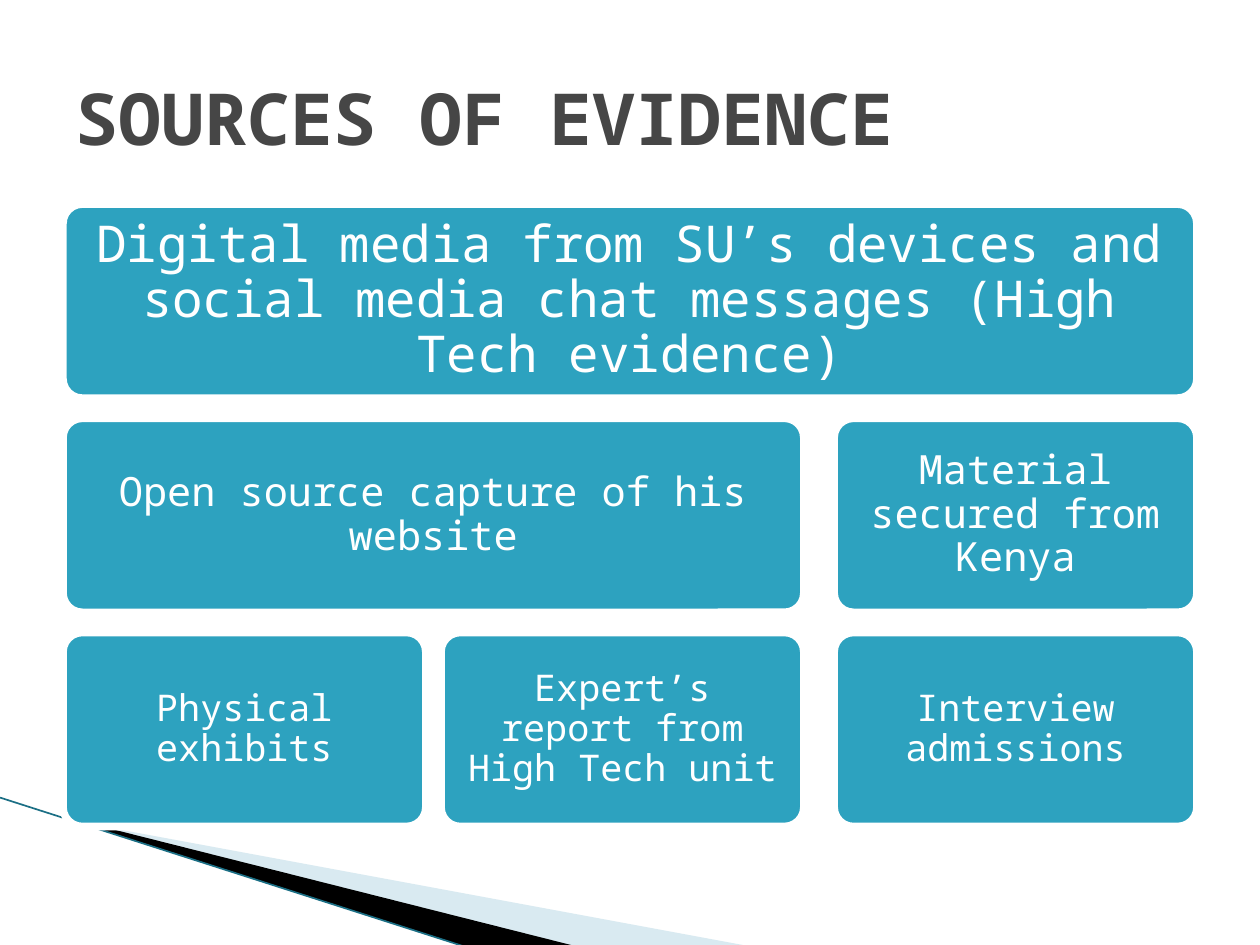
from lxml.etree import SubElement
from pptx import Presentation
from pptx.dml.color import RGBColor
from pptx.enum.shapes import MSO_CONNECTOR, MSO_SHAPE
from pptx.enum.text import MSO_ANCHOR, MSO_AUTO_SIZE, PP_ALIGN
from pptx.oxml.ns import qn
from pptx.util import Inches, Pt

FONT = "Noto Sans Mono"
COLORS = {"tile": "2DA2BF", "white": "FFFFFF", "title": "464646",
          "pale": "A0CBDC", "black": "000000", "edge": "1B6F85"}

# Each row: text size, inset, then (text, first column, columns spanned)
ROWS = [
    (29, 0.12, [("Digital media from SU’s devices and social media chat "
                 "messages (High Tech evidence)", 0, 3)]),
    (23, 0.1, [("Open source capture of his website", 0, 2),
               ("Material secured from Kenya", 2, 1)]),
    (21, 0.09, [("Physical exhibits", 0, 1),
                ("Expert’s report from High Tech unit", 1, 1),
                ("Interview admissions", 2, 1)]),
]
COLUMN_LEFTS = [0, 3, 6.12]
COLUMN_WIDTH = 2.88
ROW_HEIGHT, ROW_PITCH = 1.54, 1.7


def color(name):
    return RGBColor.from_string(COLORS[name])


def add_run(p, text, size, color_name, bold=False):
    r = p.add_run()
    r.text = text
    r.font.name = FONT
    r.font.size = Pt(size)
    r.font.bold = bold
    r.font.color.rgb = color(color_name)


def add_wedge(s, left, top, points, color_name, opacity=100):
    """Draw a filled outline whose points are offsets from left, top."""
    corners = [(Inches(left + x), Inches(top + y)) for x, y in points]
    builder = s.shapes.build_freeform(*corners[0])
    builder.add_line_segments(corners[1:])
    sp = builder.convert_to_shape()
    sp.shadow.inherit = False
    sp.fill.solid()
    sp.fill.fore_color.rgb = color(color_name)
    sp.line.fill.background()
    if opacity < 100:
        rgb = sp.fill._xPr.find(f"{qn('a:solidFill')}/{qn('a:srgbClr')}")
        SubElement(rgb, qn("a:alpha"), val=str(opacity * 1000))


def add_corner_sweep(s, left, top):
    add_wedge(s, left, top, [(0.55, 0.18), (5.95, 1.18), (4.56, 1.18), (0.55, 0.17)],
              "pale", 40)
    add_wedge(s, left, top, [(0.53, 0.16), (4.57, 1.18), (3.72, 1.19), (0.54, 0.17)],
              "black")
    edge = s.shapes.add_connector(MSO_CONNECTOR.STRAIGHT, Inches(left), Inches(top),
                                  Inches(left + 3.71), Inches(top + 1.19))
    edge.line.color.rgb = color("edge")
    edge.line.width = Pt(0.95)
    SubElement(edge._element.spPr, qn("a:effectLst"))


def add_title(s, left, top, width, height):
    title = s.shapes.title
    title.left, title.top = Inches(left), Inches(top)
    title.width, title.height = Inches(width), Inches(height)
    tf = title.text_frame
    tf.auto_size = MSO_AUTO_SIZE.NONE
    tf.vertical_anchor = MSO_ANCHOR.MIDDLE
    p = tf.paragraphs[0]
    p.alignment = PP_ALIGN.LEFT
    add_run(p, "SOURCES OF EVIDENCE", 41, "title", bold=True)


def add_tile(s, left, top, width, height, text, size, inset):
    sp = s.shapes.add_shape(MSO_SHAPE.ROUNDED_RECTANGLE, Inches(left), Inches(top),
                            Inches(width), Inches(height))
    sp.adjustments[0] = 0.1
    sp.shadow.inherit = False
    sp.fill.solid()
    sp.fill.fore_color.rgb = color("tile")
    sp.line.color.rgb = color("white")
    sp.line.width = Pt(4.33)
    tf = sp.text_frame
    tf.word_wrap = True
    tf.vertical_anchor = MSO_ANCHOR.MIDDLE
    tf.margin_left = tf.margin_right = Inches(inset)
    tf.margin_top = tf.margin_bottom = Inches(inset)
    p = tf.paragraphs[0]
    p.alignment = PP_ALIGN.CENTER
    p.line_spacing = 0.9
    add_run(p, text, size, "white")


def add_evidence_grid(s, left, top):
    for row, (size, inset, tiles) in enumerate(ROWS):
        for text, first, span in tiles:
            start = COLUMN_LEFTS[first]
            width = COLUMN_LEFTS[first + span - 1] + COLUMN_WIDTH - start
            add_tile(s, left + start, top + row * ROW_PITCH, width, ROW_HEIGHT,
                     text, size, inset)


def main():
    prs = Presentation()
    prs.slide_width, prs.slide_height = Inches(10), Inches(7.5)
    s = prs.slides.add_slide(prs.slide_layouts[5])
    add_corner_sweep(s, 0, 6.33)
    add_evidence_grid(s, 0.5, 1.62)
    add_title(s, 0.5, 0.3, 9, 1.25)
    prs.save("out.pptx")


if __name__ == "__main__":
    main()
